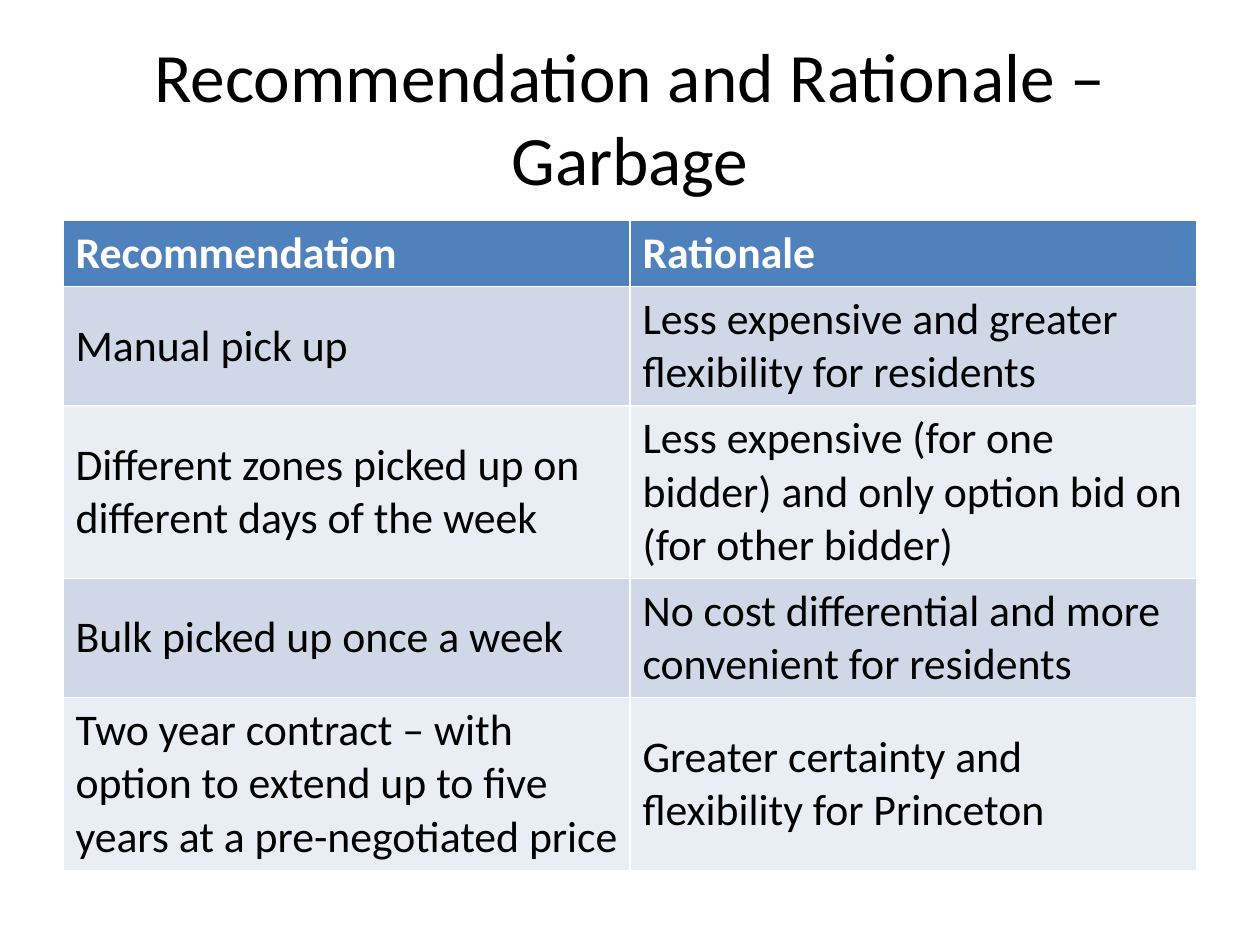
from pptx import Presentation
from pptx import util as u
from pptx.dml.color import RGBColor
from pptx.enum import text

Inches, Pt = u.Inches, u.Pt
FONT = "Calibri"
COLORS = {"black": "000000", "white": "FFFFFF", "header": "4F81BD",
          "dark_band": "D0D8E8", "light_band": "E9EDF4"}


def add_run(p, words, size, color, bold=False):
    r = p.add_run()
    r.text = words
    r.font.name = FONT
    r.font.size = Pt(size)
    r.font.bold = bold
    r.font.color.rgb = RGBColor.from_string(COLORS[color])


prs = Presentation()
prs.slide_width, prs.slide_height = Inches(10), Inches(7.5)
s = prs.slides.add_slide(prs.slide_layouts[5])

# Title
sp = s.shapes.title
sp.left, sp.top, sp.width, sp.height = Inches(0.5), Inches(0.3), Inches(9), Inches(1.25)
tf = sp.text_frame
tf.word_wrap = True
tf.auto_size = text.MSO_AUTO_SIZE.NONE
tf.vertical_anchor = text.MSO_ANCHOR.MIDDLE
p = tf.paragraphs[0]
p.alignment = text.PP_ALIGN.CENTER
add_run(p, "Recommendation and Rationale – Garbage", 39.6, "black")

# Table: row height and cell texts; the default style draws the white borders
rows = [
    (0.52, "Recommendation", "Rationale"),
    (0.94, "Manual pick up", "Less expensive and greater flexibility for residents"),
    (1.37, "Different zones picked up on different days of the week",
     "Less expensive (for one bidder) and only option bid on (for other bidder)"),
    (0.94, "Bulk picked up once a week",
     "No cost differential and more convenient for residents"),
    (1.37, "Two year contract – with option to extend up to five years "
     "at a pre-negotiated price",
     "Greater certainty and flexibility for Princeton"),
]
total = sum(row[0] for row in rows)
table = s.shapes.add_table(len(rows), 2, Inches(0.5), Inches(1.75),
                           Inches(9), Inches(total)).table

for i, (height, *words) in enumerate(rows):
    table.rows[i].height = Inches(height)
    header = i == 0
    fill = "header" if header else "dark_band" if i % 2 else "light_band"
    for j, word in enumerate(words):
        cell = table.cell(i, j)
        cell.fill.solid()
        cell.fill.fore_color.rgb = RGBColor.from_string(COLORS[fill])
        cell.vertical_anchor = text.MSO_ANCHOR.TOP if header else text.MSO_ANCHOR.MIDDLE
        add_run(cell.text_frame.paragraphs[0], word, 25,
                "white" if header else "black", header)

prs.save("out.pptx")
